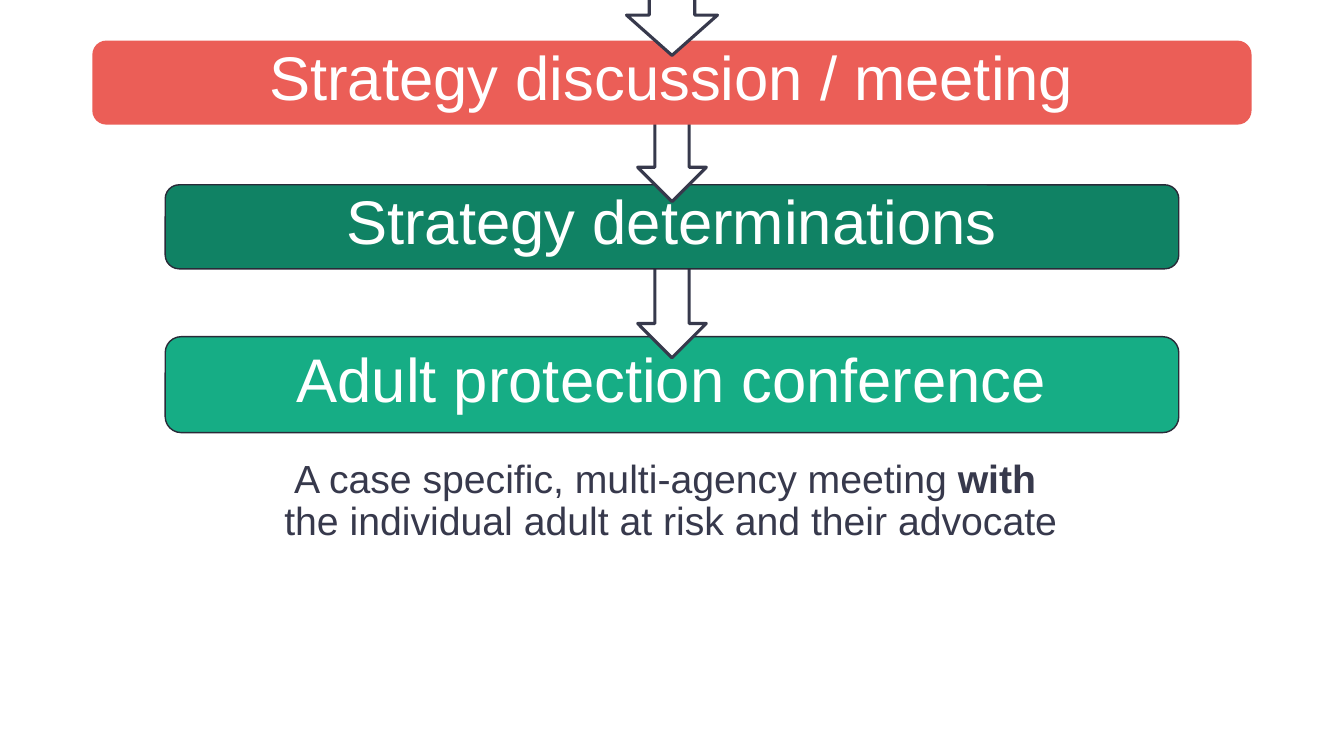
import pptx
import pptx.util
import pptx.dml.color
import pptx.enum.shapes
import pptx.enum.text

Pt = pptx.util.Pt
SHAPE = pptx.enum.shapes.MSO_SHAPE
COLORS = {"white": "FFFFFF", "ink": "37394C", "edge": "292A38",
          "coral": "EB5E57", "dark_green": "108264", "green": "16AD85"}
STEP_FONT = {"name": "Arial", "size": Pt(44), "bold": False}
CAPTION_FONT = {"name": "Arial", "size": Pt(28)}
CENTER = 480


def rgb(name):
    """Return the named colour."""
    return pptx.dml.color.RGBColor.from_string(COLORS[name])


def add_run(p, text, color, font):
    """Add a formatted run to a paragraph."""
    r = p.add_run()
    r.text = text
    r.font.color.rgb = rgb(color)
    for key, value in font.items():
        setattr(r.font, key, value)


def add_block(s, kind, box, fill, line=None, width=1):
    """Add a filled shape centred on the flow axis; box is top, width, height."""
    top, w, h = box
    sp = s.shapes.add_shape(kind, Pt(CENTER - w / 2), Pt(top), Pt(w), Pt(h))
    sp.shadow.inherit = False
    sp.fill.solid()
    sp.fill.fore_color.rgb = rgb(fill)
    if line:
        sp.line.color.rgb = rgb(line)
        sp.line.width = Pt(width)
    else:
        sp.line.fill.background()
    return sp


def add_step(s, box, text, fill, line=None):
    """Add a rounded flow step with its label."""
    tf = add_block(s, SHAPE.ROUNDED_RECTANGLE, box, fill, line).text_frame
    tf.word_wrap = True
    tf.vertical_anchor = pptx.enum.text.MSO_ANCHOR.MIDDLE
    p = tf.paragraphs[0]
    p.alignment = pptx.enum.text.PP_ALIGN.CENTER
    p.line_spacing = 0.8
    add_run(p, text, "white", STEP_FONT)


def add_arrow(s, box):
    """Add an outlined arrow pointing to the next step."""
    add_block(s, SHAPE.DOWN_ARROW, box, "white", "ink", 2.25)


def add_caption(s, left, top, w, h):
    """Add the two-line explanation under the last step."""
    tf = s.shapes.add_textbox(Pt(left), Pt(top), Pt(w), Pt(h)).text_frame
    tf.word_wrap = True
    p = tf.paragraphs[0]
    p.alignment = pptx.enum.text.PP_ALIGN.CENTER
    p.line_spacing = 0.9
    add_run(p, "A case specific, multi-agency meeting ", "ink", CAPTION_FONT)
    add_run(p, "with ", "ink", {**CAPTION_FONT, "bold": True})
    p.add_line_break()
    add_run(p, "the individual adult at risk and their advocate", "ink", CAPTION_FONT)


def build_flow(s):
    """Place the steps, arrows and caption from back to front."""
    add_step(s, (240.5, 724, 68.5), "Adult protection conference", "green", "edge")
    add_arrow(s, (183.6, 49, 72))
    add_step(s, (132, 724, 60), "Strategy determinations", "dark_green", "edge")
    add_arrow(s, (72, 49, 72))
    add_caption(s, 65, 324.7, 828, 68.5)
    add_step(s, (29, 828, 60), "Strategy discussion / meeting", "coral")
    add_arrow(s, (-18, 65, 57.6))


def main():
    """Build and save the presentation."""
    prs = pptx.Presentation()
    prs.slide_width, prs.slide_height = Pt(960), Pt(540)
    build_flow(prs.slides.add_slide(prs.slide_layouts[6]))
    prs.save("out.pptx")


if __name__ == "__main__":
    main()
